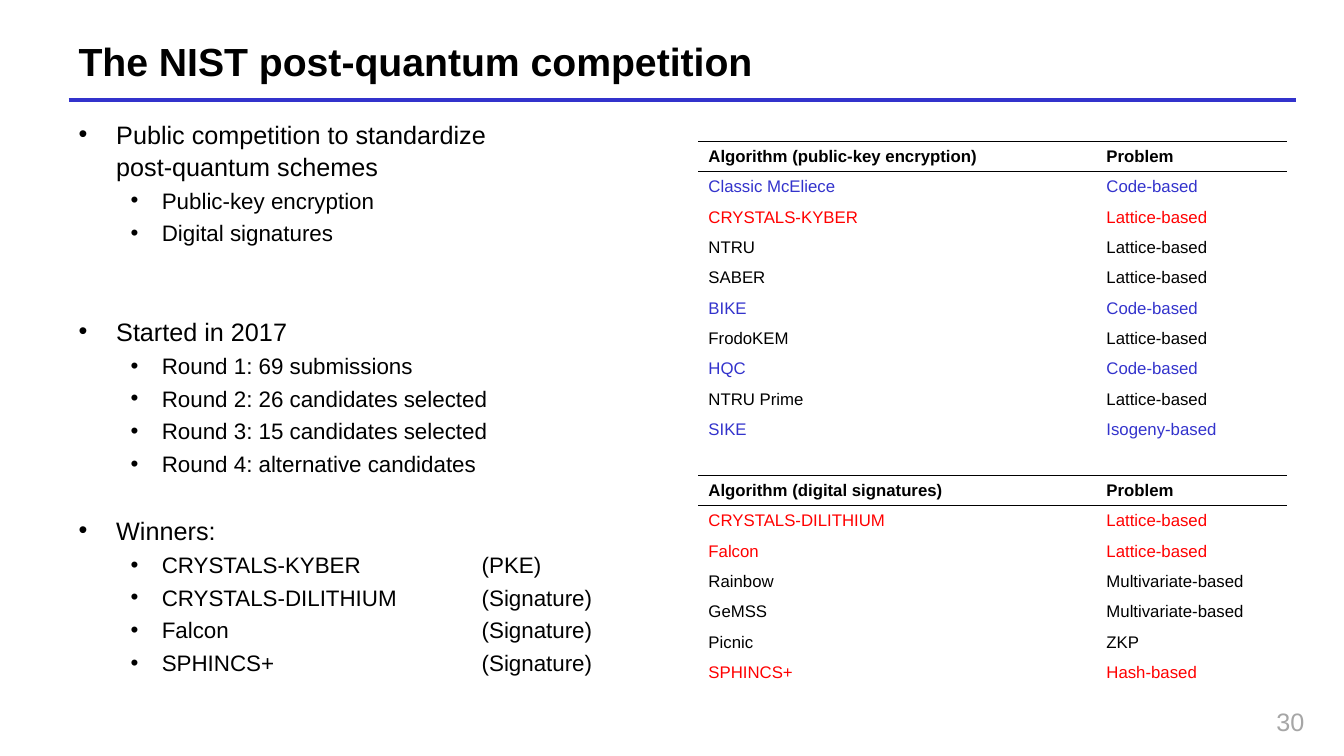
from dataclasses import dataclass

from lxml import etree
from pptx import Presentation
from pptx.dml.color import RGBColor
from pptx.enum.shapes import MSO_CONNECTOR
from pptx.enum.text import MSO_ANCHOR, PP_ALIGN
from pptx.oxml.ns import qn
from pptx.util import Cm, Pt

STRAIGHT = MSO_CONNECTOR.STRAIGHT
MIDDLE = MSO_ANCHOR.MIDDLE
LEFT = PP_ALIGN.LEFT
RIGHT = PP_ALIGN.RIGHT
NO_TABLE_STYLE = "{2D5ABB26-0587-4C30-8999-92F81FD0307C}"


@dataclass(frozen=True)
class Theme:
    font: str = "Arial"
    ink: RGBColor = RGBColor(0x00, 0x00, 0x00)
    paper: RGBColor = RGBColor(0xFF, 0xFF, 0xFF)
    accent: RGBColor = RGBColor(0x33, 0x33, 0xCC)
    winner: RGBColor = RGBColor(0xFF, 0x00, 0x00)
    muted: RGBColor = RGBColor(0xA6, 0xA6, 0xA6)
    title: int = 28
    topic: int = 18
    detail: int = 16
    cell: int = 12
    page: int = 18


THEME = Theme()
ROW_COLOURS = {"plain": THEME.ink, "header": THEME.ink,
               "winner": THEME.winner, "alternate": THEME.accent}

TOPICS = [
    ("Public competition to standardize\npost-quantum schemes", 0,
     ["Public-key encryption", "Digital signatures"]),
    ("Started in 2017", 48.6,
     ["Round 1: 69 submissions", "Round 2: 26 candidates selected",
      "Round 3: 15 candidates selected", "Round 4: alternative candidates"]),
    ("Winners:", 26.1,
     ["CRYSTALS-KYBER\t(PKE)", "CRYSTALS-DILITHIUM\t(Signature)",
      "Falcon\t(Signature)", "SPHINCS+\t(Signature)"]),
]

ALGORITHMS = [
    ("Algorithm (public-key encryption)", "Problem", "header"),
    ("Classic McEliece", "Code-based", "alternate"),
    ("CRYSTALS-KYBER", "Lattice-based", "winner"),
    ("NTRU", "Lattice-based", "plain"),
    ("SABER", "Lattice-based", "plain"),
    ("BIKE", "Code-based", "alternate"),
    ("FrodoKEM", "Lattice-based", "plain"),
    ("HQC", "Code-based", "alternate"),
    ("NTRU Prime", "Lattice-based", "plain"),
    ("SIKE", "Isogeny-based", "alternate"),
    ("", "", "plain"),
    ("Algorithm (digital signatures)", "Problem", "header"),
    ("CRYSTALS-DILITHIUM", "Lattice-based", "winner"),
    ("Falcon", "Lattice-based", "winner"),
    ("Rainbow", "Multivariate-based", "plain"),
    ("GeMSS", "Multivariate-based", "plain"),
    ("Picnic", "ZKP", "plain"),
    ("SPHINCS+", "Hash-based", "winner"),
]


def style_runs(paragraph, size, colour, bold=False):
    for run in paragraph.runs:
        run.font.name = THEME.font
        run.font.size = Pt(size)
        run.font.bold = bold
        run.font.color.rgb = colour


def add_text_frame(slide, box):
    frame = slide.shapes.add_textbox(*box).text_frame
    frame.word_wrap = True
    return frame


def add_label(slide, box, text, size, colour, bold=False, align=LEFT):
    frame = add_text_frame(slide, box)
    frame.vertical_anchor = MIDDLE
    frame.text = text
    label = frame.paragraphs[0]
    label.alignment = align
    style_runs(label, size, colour, bold)


def add_title(slide, box, text):
    left, top, width, height = box
    add_label(slide, box, text, THEME.title, THEME.ink, bold=True)
    rule_y = top + height + Cm(0.33)
    rule = slide.shapes.add_connector(STRAIGHT, left, rule_y, left + width, rule_y)
    rule.line.color.rgb = THEME.accent
    rule.line.width = Pt(3)
    etree.SubElement(rule._element.spPr, qn("a:effectLst"))


def set_bullet(paragraph, indent, hanging):
    properties = paragraph._p.get_or_add_pPr()
    properties.set("marL", str(indent))
    properties.set("indent", str(-hanging))
    etree.SubElement(properties, qn("a:buFont"), typeface=THEME.font)
    etree.SubElement(properties, qn("a:buChar"), char="•")
    tabs = etree.SubElement(properties, qn("a:tabLst"))
    etree.SubElement(tabs, qn("a:tab"), pos=str(Cm(10.16)), algn="l")


def add_topics(slide, box, topics):
    frame = add_text_frame(slide, box)
    lines = []
    for topic, gap, details in topics:
        lines.append((topic, 0, THEME.topic, gap, Cm(0.95), Cm(0.95)))
        lines += [(detail, 1, THEME.detail, 3.2, Cm(2.1), Cm(0.79)) for detail in details]
    for number, (text, level, size, gap, indent, hanging) in enumerate(lines):
        entry = frame.add_paragraph() if number else frame.paragraphs[0]
        entry.text = text
        entry.level = level
        entry.line_spacing = 1.05
        entry.space_before = Pt(gap)
        set_bullet(entry, indent, hanging)
        style_runs(entry, size, THEME.ink)


def add_rules(cell):
    properties = cell._tc.get_or_add_tcPr()
    for position, edge in enumerate(("a:lnT", "a:lnB")):
        line = etree.Element(qn(edge), w=str(Pt(1)))
        fill = etree.SubElement(line, qn("a:solidFill"))
        etree.SubElement(fill, qn("a:srgbClr"), val=str(THEME.ink))
        properties.insert(position, line)


def fill_cell(cell, text, kind):
    cell.text = text
    cell.vertical_anchor = MIDDLE
    cell.margin_top = cell.margin_bottom = Cm(0.1)
    cell.fill.solid()
    cell.fill.fore_color.rgb = THEME.paper
    entry = cell.text_frame.paragraphs[0]
    style_runs(entry, THEME.cell, ROW_COLOURS[kind], kind == "header")
    if not text:
        entry._p.get_or_add_endParaRPr().set("sz", str(THEME.cell * 100))
    if kind == "header":
        add_rules(cell)


def add_algorithms(slide, box, algorithms):
    left, top, width, height = box
    table = slide.shapes.add_table(len(algorithms), 2, *box).table
    table.first_row = False
    table.horz_banding = False
    table._tbl.tblPr.find(qn("a:tableStyleId")).text = NO_TABLE_STYLE
    table.columns[0].width = Cm(10.03)
    table.columns[1].width = width - Cm(10.03)
    for row, (algorithm, problem, kind) in enumerate(algorithms):
        table.rows[row].height = height // len(algorithms)
        fill_cell(table.cell(row, 0), algorithm, kind)
        fill_cell(table.cell(row, 1), problem, kind)


def main():
    deck = Presentation()
    deck.slide_width = Cm(33.87)
    deck.slide_height = Cm(19.05)
    slide = deck.slides.add_slide(deck.slide_layouts[6])
    add_title(slide, (Cm(1.73), Cm(0.91), Cm(30.94), Cm(1.27)),
              "The NIST post-quantum competition")
    add_topics(slide, (Cm(1.73), Cm(2.84), Cm(15.5), Cm(14.07)), TOPICS)
    add_algorithms(slide, (Cm(17.6), Cm(3.56), Cm(14.83), Cm(13.77)), ALGORITHMS)
    add_label(slide, (Cm(26.06), Cm(17.73), Cm(7.06), Cm(0.91)), "30",
              THEME.page, THEME.muted, align=RIGHT)
    deck.save("out.pptx")


if __name__ == "__main__":
    main()
